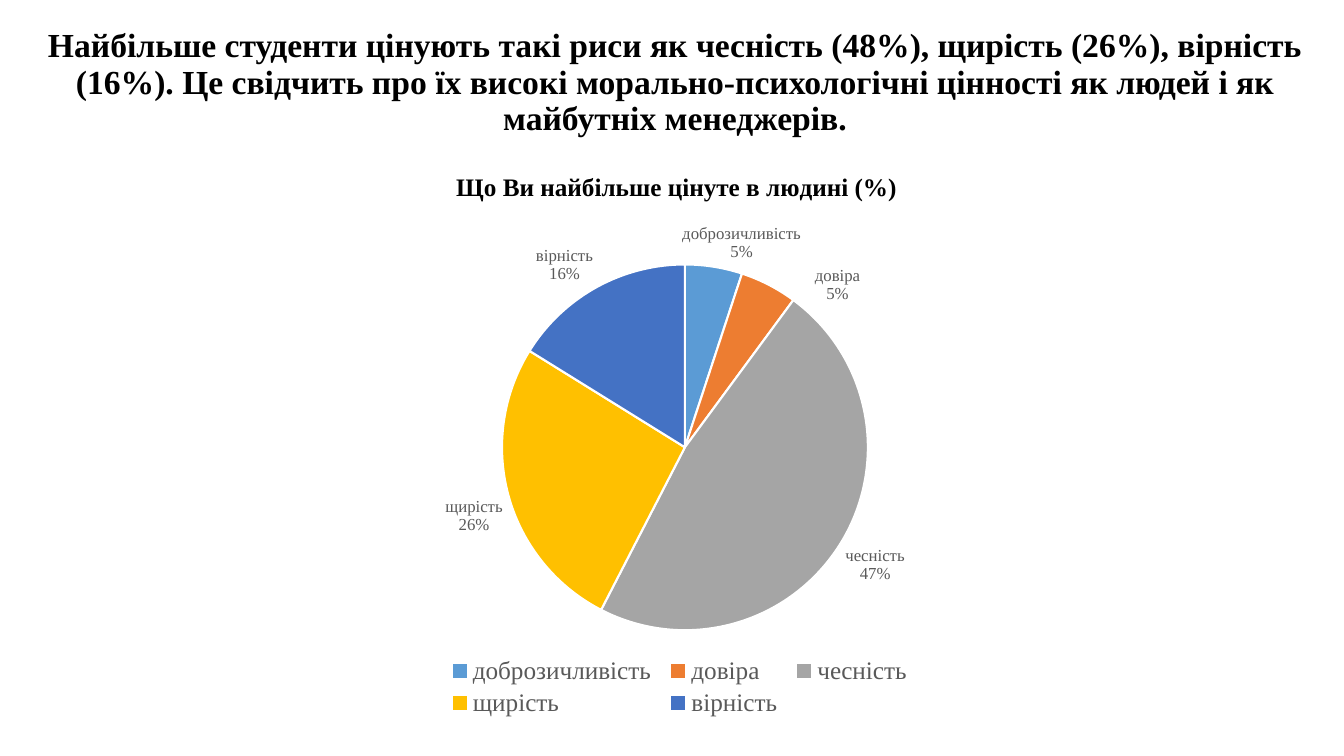
import pptx
import pptx.util
import pptx.chart.data
import pptx.dml.color
import pptx.enum.chart
import pptx.enum.text
import pptx.oxml

PX = 9144  # EMU in one px, 100 px to the inch
SLIDE_SIZE = (1333, 750)
TITLE_BOX = (31, 16, 1277, 133)
CHART_BOX = (136, 149, 1076, 567)
FONT = "Times New Roman"
BLACK, GREY, WHITE = "000000", "595959", "FFFFFF"
CHART_XMLNS = 'xmlns:c="http://schemas.openxmlformats.org/drawingml/2006/chart"'
OUTSIDE = pptx.enum.chart.XL_LABEL_POSITION.OUTSIDE_END

HEADLINE = ("Найбільше студенти цінують такі риси як чесність (48%), щирість (26%), "
            "вірність (16%). Це свідчить про їх високі морально-психологічні цінності "
            "як людей і як майбутніх менеджерів.")
QUESTION = "Що Ви найбільше цінуте в людині (%)"
TRAITS = {
    "доброзичливість": (5, "5B9BD5"),
    "довіра": (5, "ED7D31"),
    "чесність": (47, "A5A5A5"),
    "щирість": (26, "FFC000"),
    "вірність": (16, "4472C4"),
}
# Shifts that keep the labels of the two small slices apart
LABEL_SHIFTS = [{"x": -0.03, "y": 0}, {"x": 0.04, "y": 0.04}]


def px(length):
    return pptx.util.Emu(round(length * PX))


def color(hex_code):
    return pptx.dml.color.RGBColor.from_string(hex_code)


def set_values(target, values):
    for name, value in values.items():
        setattr(target, name, value)


def format_font(font, size, hex_code, bold=False):
    set_values(font, {"name": FONT, "size": pptx.util.Pt(size), "bold": bold})
    font.color.rgb = color(hex_code)


def chart_xml(name, content):
    return pptx.oxml.parse_xml(f"<c:{name} {CHART_XMLNS}>{content}</c:{name}>")


def val_tags(values):
    return "".join(f'<c:{name} val="{value}"/>' for name, value in values.items())


def place_part(element, index, **settings):
    """Give a chart part a manual layout, in fractions of the chart."""
    for layout in element.xpath("c:layout"):
        element.remove(layout)
    element.insert(index, chart_xml(
        "layout", f"<c:manualLayout>{val_tags(settings)}</c:manualLayout>"))


def add_headline(page, box):
    title = page.shapes.title
    set_values(title, dict(zip(("left", "top", "width", "height"), map(px, box))))
    frame = title.text_frame
    set_values(frame, {
        "word_wrap": True,
        "auto_size": pptx.enum.text.MSO_AUTO_SIZE.NONE,
        "vertical_anchor": pptx.enum.text.MSO_ANCHOR.MIDDLE,
    })
    para = frame.paragraphs[0]
    set_values(para, {"alignment": pptx.enum.text.PP_ALIGN.CENTER, "line_spacing": 0.9})
    span = para.add_run()
    span.text = HEADLINE
    format_font(span.font, 24, BLACK, bold=True)


def format_slices(series):
    for index, (_, hex_code) in enumerate(TRAITS.values()):
        piece = series.points[index].format
        piece.fill.solid()
        piece.fill.fore_color.rgb = color(hex_code)
        piece.line.color.rgb = color(WHITE)
        piece.line.width = pptx.util.Pt(1.5)


def format_labels(series):
    labels = series.data_labels
    set_values(labels, {
        "show_category_name": True,
        "show_percentage": True,
        "show_value": False,
        "number_format": "0%",
        "number_format_is_linked": False,
        "position": OUTSIDE,
    })
    format_font(labels.font, 12, GREY)
    # Name and share stand on separate lines
    group = labels._element
    group.xpath("c:showBubbleSize|c:showPercent")[-1].addnext(chart_xml("separator", "\n"))
    for leader in group.xpath("c:showLeaderLines"):
        leader.set("val", "0")

    # Labels of the small slices
    shown = val_tags({"showLegendKey": 0, "showVal": 0, "showCatName": 1,
                      "showSerName": 0, "showPercent": 1, "showBubbleSize": 0})
    for index, shift in enumerate(LABEL_SHIFTS):
        entry = chart_xml("dLbl", f'<c:idx val="{index}"/>'
                          '<c:numFmt formatCode="0%" sourceLinked="0"/>'
                          f"{shown}<c:separator>\n</c:separator>")
        place_part(entry, 1, **shift)
        group.insert(index, entry)
        label = series.points[index].data_label
        label.position = OUTSIDE
        format_font(label.font, 12, GREY)


def add_trait_chart(page, box):
    data = pptx.chart.data.CategoryChartData()
    data.categories = list(TRAITS)
    data.add_series("Series 1", [share for share, _ in TRAITS.values()])
    chart = page.shapes.add_chart(
        pptx.enum.chart.XL_CHART_TYPE.PIE, *map(px, box), data).chart
    format_font(chart.font, 10, BLACK)
    edges = {"xMode": "edge", "yMode": "edge"}

    # Chart title
    chart.has_title = True
    para = chart.chart_title.text_frame.paragraphs[0]
    span = para.add_run()
    span.text = QUESTION
    format_font(span.font, 18, BLACK, bold=True)
    place_part(chart.chart_title._element, 1, **edges, x=0.29, y=0.03)

    # Pie
    plot = chart.plots[0]
    plot.vary_by_categories = True
    format_slices(plot.series[0])
    format_labels(plot.series[0])
    place_part(chart._chartSpace.chart.plotArea, 0, layoutTarget="inner", **edges,
               x=0.33, y=0.2, w=0.35, h=0.64)

    # Legend in two rows
    chart.has_legend = True
    legend = chart.legend
    set_values(legend, {"position": pptx.enum.chart.XL_LEGEND_POSITION.BOTTOM,
                        "include_in_layout": False})
    format_font(legend.font, 18, GREY)
    place_part(legend._element, 1, **edges, x=0.28, y=0.88, w=0.44, h=0.12)


def main():
    deck = pptx.Presentation()
    deck.slide_width, deck.slide_height = map(px, SLIDE_SIZE)
    page = deck.slides.add_slide(deck.slide_layouts[5])
    add_headline(page, TITLE_BOX)
    add_trait_chart(page, CHART_BOX)
    deck.save("out.pptx")


if __name__ == "__main__":
    main()
